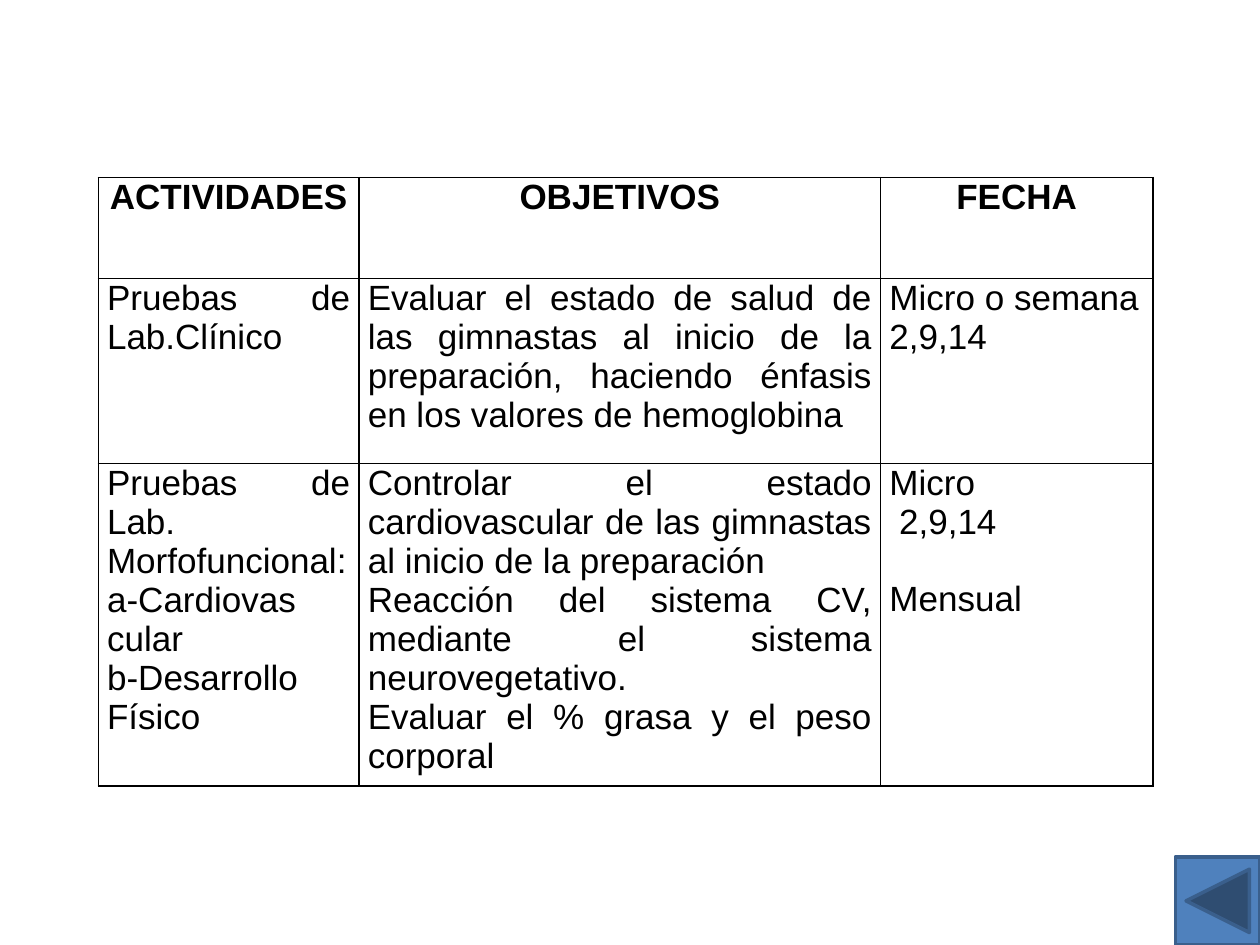
from lxml import etree
from pptx import Presentation
from pptx.dml.color import RGBColor
from pptx.enum import shapes, text
from pptx.oxml import ns
from pptx.util import Inches, Pt

BLACK = RGBColor(0x00, 0x00, 0x00)
BUTTON_BLUE = RGBColor(0x4F, 0x81, 0xBD)
BUTTON_EDGE = RGBColor(0x3A, 0x5F, 0x8C)

HEADINGS = ["ACTIVIDADES", "OBJETIVOS", "FECHA"]
# Each cell is a list of paragraphs
ACTIVITIES = [
    [
        ["Pruebas de Lab.Clínico"],
        ["Evaluar el estado de salud de las gimnastas al inicio de la "
         "preparación, haciendo énfasis en los valores de hemoglobina"],
        ["Micro o semana", "2,9,14"],
    ],
    [
        ["Pruebas de Lab.", "Morfofuncional:", "a-Cardiovas", "cular",
         "b-Desarrollo Físico"],
        ["Controlar el estado cardiovascular de las gimnastas al inicio de "
         "la preparación",
         "Reacción del sistema CV, mediante el sistema neurovegetativo.",
         "Evaluar el % grasa y el peso corporal"],
        ["Micro", " 2,9,14", "Mensual"],
    ],
]
SPACED_PARAGRAPH = "Mensual"  # stands one line below the paragraph before it
COLUMN_WIDTHS = [2.07, 4.14, 2.16]
ROW_HEIGHTS = [0.8, 1.47, 2.56]
TABLE_LEFT, TABLE_TOP = 0.78, 1.41
BUTTON_WIDTH, BUTTON_HEIGHT = 0.67, 0.7


def add_borders(cell):
    properties = cell._tc.get_or_add_tcPr()
    for side in ("a:lnL", "a:lnR", "a:lnT", "a:lnB"):
        border = etree.SubElement(properties, ns.qn(side), w=str(Pt(1)))
        fill = etree.SubElement(border, ns.qn("a:solidFill"))
        etree.SubElement(fill, ns.qn("a:srgbClr"), val=str(BLACK))


def fill_cell(cell, paragraphs, heading):
    add_borders(cell)
    cell.fill.background()
    cell.margin_left = cell.margin_right = Inches(0.07)
    cell.margin_top = cell.margin_bottom = 0
    frame = cell.text_frame
    for index, words in enumerate(paragraphs):
        paragraph = frame.add_paragraph() if index else frame.paragraphs[0]
        paragraph.alignment = (text.PP_ALIGN.CENTER if heading
                               else text.PP_ALIGN.JUSTIFY)
        if words == SPACED_PARAGRAPH:
            paragraph.space_before = Pt(22)
        run = paragraph.add_run()
        run.text = words
        run.font.name = "Arial"
        run.font.size = Pt(20)
        run.font.bold = heading
        run.font.color.rgb = BLACK


def add_activity_table(slide):
    rows = [[[heading] for heading in HEADINGS]] + ACTIVITIES
    table = slide.shapes.add_table(
        len(rows), len(HEADINGS), Inches(TABLE_LEFT), Inches(TABLE_TOP),
        Inches(sum(COLUMN_WIDTHS)), Inches(sum(ROW_HEIGHTS))).table
    table.first_row = table.horz_banding = False
    for column, width in zip(table.columns, COLUMN_WIDTHS):
        column.width = Inches(width)
    for r, (row, height) in enumerate(zip(rows, ROW_HEIGHTS)):
        table.rows[r].height = Inches(height)
        for c, paragraphs in enumerate(row):
            fill_cell(table.cell(r, c), paragraphs, heading=r == 0)


def add_back_button(slide, deck):
    width, height = Inches(BUTTON_WIDTH), Inches(BUTTON_HEIGHT)
    button = slide.shapes.add_shape(
        shapes.MSO_SHAPE.ACTION_BUTTON_BACK_OR_PREVIOUS,
        deck.slide_width - width, deck.slide_height - height, width, height)
    button.shadow.inherit = False
    button.fill.solid()
    button.fill.fore_color.rgb = BUTTON_BLUE
    button.line.color.rgb = BUTTON_EDGE
    button.line.width = Pt(2)


def main():
    deck = Presentation()
    deck.slide_width, deck.slide_height = Inches(10), Inches(7.5)
    slide = deck.slides.add_slide(deck.slide_layouts[6])
    add_activity_table(slide)
    add_back_button(slide, deck)
    deck.save("out.pptx")


if __name__ == "__main__":
    main()
